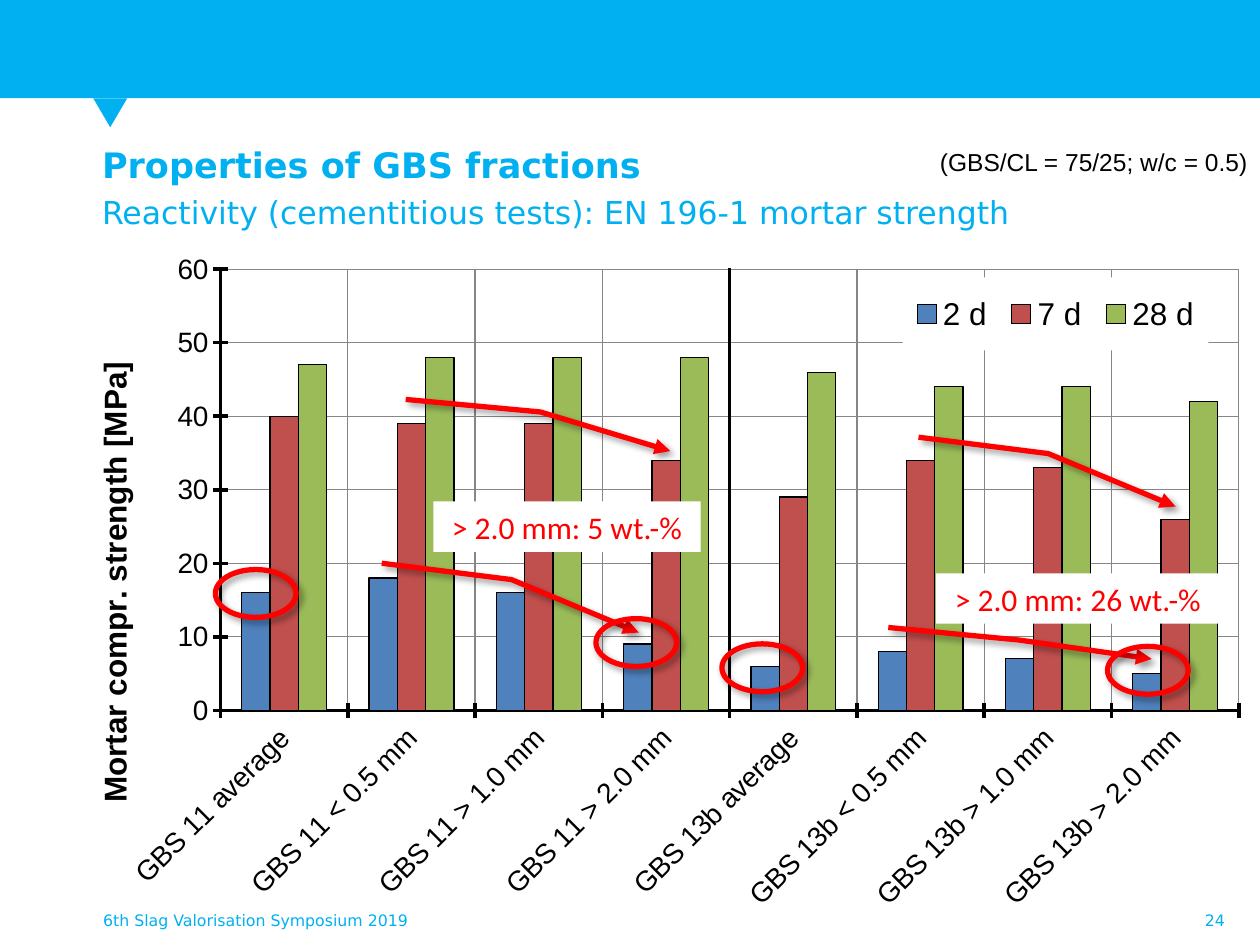
from lxml import etree
from pptx import Presentation
from pptx.chart.data import CategoryChartData
from pptx.dml.color import RGBColor
from pptx.enum import chart as ec, shapes, text
from pptx.oxml import parse_xml
from pptx.oxml.ns import nsdecls, qn
from pptx.util import Inches, Pt

COLORS = {
    "cyan": "00B0F0", "black": "000000", "white": "FFFFFF", "red": "FF0000", "grid": "868686",
    "2 d": "4F81BD", "7 d": "C0504D", "28 d": "9BBB59",
}
RGB = {name: RGBColor.from_string(value) for name, value in COLORS.items()}


def add_run(p, words, size, font, color, bold=False):
    r = p.add_run()
    r.text = words
    r.font.size, r.font.name, r.font.bold = Pt(size), font, bold
    r.font.color.rgb = RGB[color]


def style_mark(sp, arrow=False):
    """Give an annotation its red outline, soft shadow and optional arrowhead."""
    sp.fill.background()
    sp.line.color.rgb = RGB["red"]
    sp.line.width = Pt(3)
    if arrow:
        etree.SubElement(sp.line._get_or_add_ln(), qn("a:tailEnd"), type="triangle")
    sp.shadow.inherit = False
    sp._element.spPr.find(qn("a:effectLst")).append(parse_xml(
        f'<a:outerShdw {nsdecls("a")} blurRad="50800" dist="38100" dir="2700000" algn="tl" '
        f'rotWithShape="0"><a:srgbClr val="{COLORS["black"]}"><a:alpha val="40000"/>'
        '</a:srgbClr></a:outerShdw>'))


prs = Presentation()
prs.slide_width, prs.slide_height = Inches(10), Inches(7.5)
s = prs.slides.add_slide(prs.slide_layouts[1])
title = s.shapes.title._element
title.getparent().remove(title)

# Header band with its pointer
for kind, box, angle in [
    (shapes.MSO_SHAPE.RECTANGLE, (0, 0, 10, 0.78), 0),
    (shapes.MSO_SHAPE.ISOSCELES_TRIANGLE, (0.74, 0.78, 0.27, 0.23), 180),
]:
    sp = s.shapes.add_shape(kind, *map(Inches, box))
    sp.rotation = angle
    sp.fill.solid()
    sp.fill.fore_color.rgb = RGB["cyan"]
    sp.line.fill.background()
    sp.shadow.inherit = False

# Strength chart
data = CategoryChartData(number_format="0")
data.categories = [f"GBS {slag} {part}" for slag in ("11", "13b")
                   for part in ("average", "< 0.5 mm", "> 1.0 mm", "> 2.0 mm")]
data.add_series("2 d", (16, 18, 16, 9, 6, 8, 7, 5))
data.add_series("7 d", (40, 39, 39, 34, 29, 34, 33, 26))
data.add_series("28 d", (47, 48, 48, 48, 46, 44, 44, 42))
chart = s.shapes.add_chart(ec.XL_CHART_TYPE.COLUMN_CLUSTERED, Inches(0.7), Inches(1.96),
                           Inches(9.3), Inches(5.37), data).chart
chart.has_title = False
chart.font.size, chart.font.name = Pt(18), "Arial"
chart.font.color.rgb = RGB["black"]
plot = chart.plots[0]
plot.gap_width, plot.overlap, plot.vary_by_categories = 150, 0, False
for series in plot.series:
    series.format.fill.solid()
    series.format.fill.fore_color.rgb = RGB[series.name]
    series.format.line.color.rgb = RGB["black"]
    series.format.line.width = Pt(0.75)

for axis in (chart.category_axis, chart.value_axis):
    axis.tick_labels.font.size = Pt(16)
    axis.major_tick_mark = ec.XL_TICK_MARK.CROSS
    axis.minor_tick_mark = ec.XL_TICK_MARK.NONE
    axis.format.line.color.rgb = RGB["black"]
    axis.format.line.width = Pt(2)
    axis.has_major_gridlines = True
    axis.major_gridlines.format.line.color.rgb = RGB["grid"]
    axis.major_gridlines.format.line.width = Pt(0.75)
chart.category_axis._element.find(qn("c:txPr")).find(qn("a:bodyPr")).set("rot", "-2700000")
value_axis = chart.value_axis
value_axis.minimum_scale, value_axis.maximum_scale, value_axis.major_unit = 0, 60, 10
value_axis.tick_labels.number_format = "0"
value_axis.tick_labels.number_format_is_linked = False
add_run(value_axis.axis_title.text_frame.paragraphs[0], "Mortar compr. strength [MPa]",
        18, "Arial", "black", True)

chart.has_legend = True
legend = chart.legend
legend.position = ec.XL_LEGEND_POSITION.RIGHT
legend.include_in_layout = False
legend.font.size, legend.font.name = Pt(18), "Arial"
legend._element.find(qn("c:overlay")).addnext(parse_xml(
    f'<c:spPr {nsdecls("c", "a")}><a:solidFill><a:srgbClr val="{COLORS["white"]}"/>'
    '</a:solidFill><a:ln><a:noFill/></a:ln></c:spPr>'))

# Fixed places of plot and legend, as fractions of the chart
plot_area = chart._chartSpace.chart.plotArea
for parent, index, target, box in [
    (plot_area, 0, '<c:layoutTarget val="inner"/>', (0.113, 0.033, 0.869, 0.652)),
    (legend._element, 1, "", (0.695, 0.045, 0.261, 0.108)),
]:
    for old in parent.findall(qn("c:layout")):
        parent.remove(old)
    modes = '<c:xMode val="edge"/><c:yMode val="edge"/>'
    values = "".join(f'<c:{k} val="{v}"/>' for k, v in zip("xywh", box))
    parent.insert(index, parse_xml(
        f'<c:layout {nsdecls("c")}><c:manualLayout>{target}{modes}{values}'
        '</c:manualLayout></c:layout>'))

# Heading
sp = s.placeholders[1]
sp.left, sp.top, sp.width, sp.height = map(Inches, (0.71, 1.09, 9.29, 0.94))
tf = sp.text_frame
tf.auto_size = text.MSO_AUTO_SIZE.NONE
headings = [("Properties of GBS fractions", 20, True, 0),
            ("Reactivity (cementitious tests): EN 196-1 mortar strength", 18, False, 4)]
for i, (words, size, bold, before) in enumerate(headings):
    p = tf.add_paragraph() if i else tf.paragraphs[0]
    pPr = p._p.get_or_add_pPr()
    pPr.set("marL", str(Inches(0.38)))
    pPr.set("indent", str(Inches(-0.38)))
    etree.SubElement(pPr, qn("a:buNone"))
    p.space_before = Pt(before)
    add_run(p, words, size, "DejaVu Sans", "cyan", bold)

# Footer, page number and mix note
LEFT, RIGHT = text.PP_ALIGN.LEFT, text.PP_ALIGN.RIGHT
for words, box, align, size, font, color in [
    ("24", (7.49, 7.1, 2.33, 0.4), RIGHT, 9, "DejaVu Sans", "cyan"),
    ("6th Slag Valorisation Symposium 2019", (0.72, 7.1, 3.38, 0.4), LEFT, 9,
     "DejaVu Sans", "cyan"),
    ("(GBS/CL = 75/25; w/c = 0.5)", (7.29, 1.11, 2.71, 0.34), RIGHT, 14, "Arial", "black"),
]:
    tf = s.shapes.add_textbox(*map(Inches, box)).text_frame
    tf.word_wrap = True
    tf.vertical_anchor = text.MSO_ANCHOR.MIDDLE
    tf.paragraphs[0].alignment = align
    add_run(tf.paragraphs[0], words, size, font, color)

# Divider between the two slags
divider = s.shapes.add_connector(shapes.MSO_CONNECTOR.STRAIGHT, Inches(5.79), Inches(2.13),
                                 Inches(5.79), Inches(5.65))
divider.line.color.rgb = RGB["black"]
divider.line.width = Pt(2)
etree.SubElement(divider._element.spPr, qn("a:effectLst"))

# Trend arrows
arrows = s.shapes.add_group_shape()
for points in [
    [(3.03, 4.47), (4.06, 4.6), (5.07, 5.02)],
    [(3.22, 3.17), (4.29, 3.27), (5.32, 3.58)],
    [(7.05, 4.98), (8.09, 5.08), (9.14, 5.23)],
    [(7.29, 3.47), (8.32, 3.6), (9.33, 4.02)],
]:
    start, *rest = [(Inches(x), Inches(y)) for x, y in points]
    builder = arrows.shapes.build_freeform(*start)
    builder.add_line_segments(rest, close=False)
    style_mark(builder.convert_to_shape(), arrow=True)

# Rings around the compared bars, and labels of the coarse share
notes = s.shapes.add_group_shape()
for x, y in [(1.71, 4.52), (4.73, 4.91), (8.79, 5.13), (5.73, 5.11)]:
    style_mark(notes.shapes.add_shape(shapes.MSO_SHAPE.OVAL, Inches(x), Inches(y),
                                      Inches(0.64), Inches(0.38)))
for words, x, y, width in [("> 2.0 mm: 5 wt.-%", 3.44, 3.98, 2.12),
                           ("> 2.0 mm: 26 wt.-%", 7.43, 4.55, 2.25)]:
    sp = notes.shapes.add_shape(shapes.MSO_SHAPE.RECTANGLE, Inches(x), Inches(y),
                                Inches(width), Inches(0.4))
    sp.fill.solid()
    sp.fill.fore_color.rgb = RGB["white"]
    sp.line.fill.background()
    sp.shadow.inherit = False
    tf = sp.text_frame
    tf.word_wrap = False
    tf.paragraphs[0].alignment = text.PP_ALIGN.CENTER
    add_run(tf.paragraphs[0], words, 18, "Calibri", "red")

prs.save("out.pptx")
